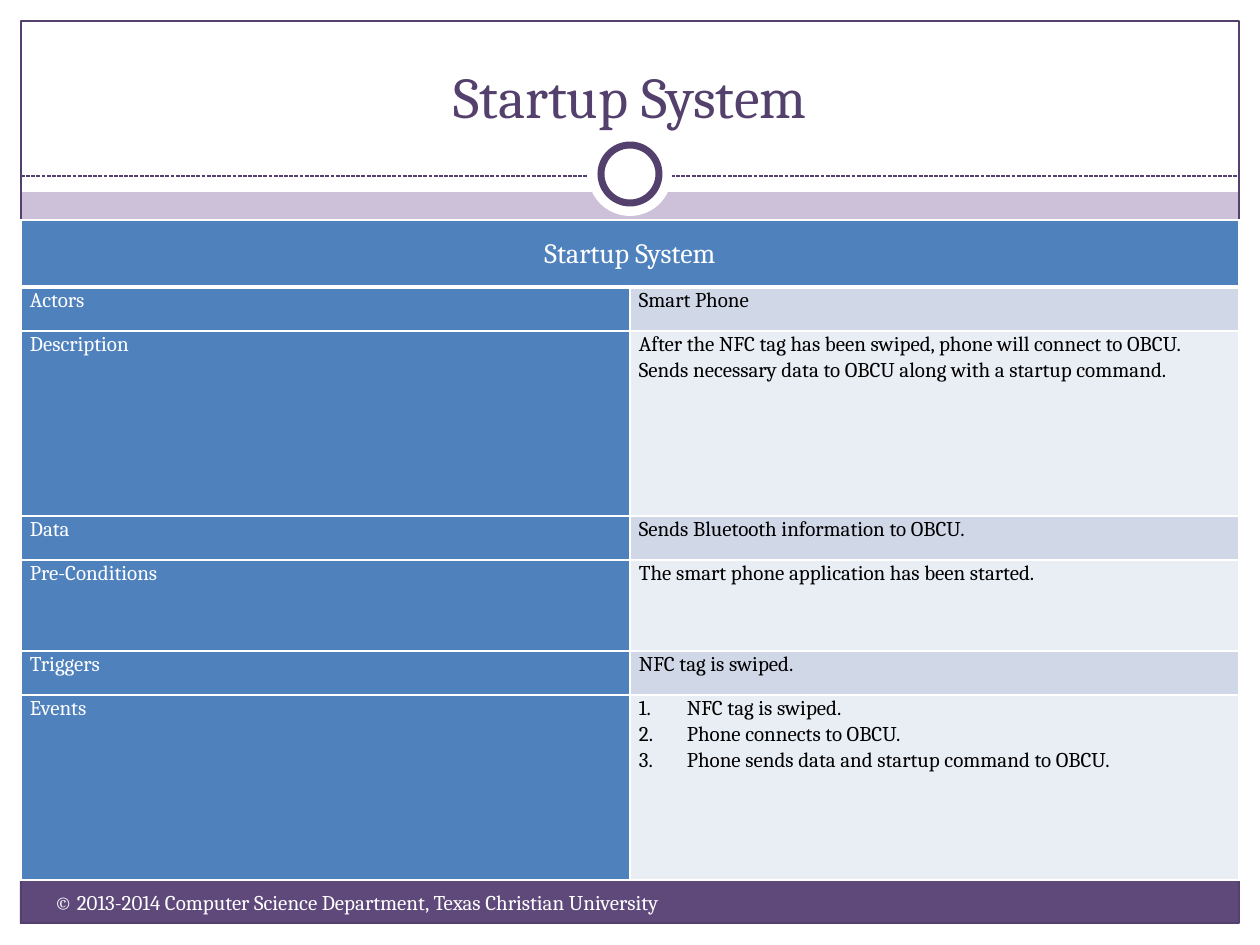
"""Build the Startup System use case slide."""
from dataclasses import dataclass
from lxml.etree import SubElement
from pptx import Presentation
from pptx.dml.color import RGBColor
from pptx.enum.dml import MSO_LINE
from pptx.enum.shapes import MSO_CONNECTOR, MSO_SHAPE
from pptx.enum.text import MSO_ANCHOR, MSO_AUTO_SIZE, PP_ALIGN
from pptx.oxml import parse_xml
from pptx.oxml.ns import nsdecls, qn
from pptx.util import Emu, Pt


@dataclass(frozen=True)
class Theme:
    """Hold the colours, font and type sizes."""
    font: str = "Cambria"
    back: str = "CCC1D9"
    white: str = "FFFFFF"
    black: str = "000000"
    plum: str = "54406C"
    foot: str = "5F497A"
    blue: str = "4F81BD"
    bands: tuple = ("D0D8E8", "E9EDF4")
    title: int = 33
    head: int = 16
    body: int = 12
    thin: float = 0.75
    ring: int = 4


THEME = Theme()
SCALE = 914400 / 126
WIDE, HIGH, EDGE = 1260, 945, 21
ROWS = [
    ("Actors", ["Smart Phone"], 44),
    ("Description", ["After the NFC tag has been swiped, phone will connect to OBCU. "
                     "Sends necessary data to OBCU along with a startup command."], 185),
    ("Data", ["Sends Bluetooth information to OBCU."], 44),
    ("Pre-Conditions", ["The smart phone application has been started."], 91),
    ("Triggers", ["NFC tag is swiped."], 44),
    ("Events", ["NFC tag is swiped.", "Phone connects to OBCU.",
                "Phone sends data and startup command to OBCU."], 185),
]


def px(size):
    """Turn pixels into EMU."""
    return Emu(round(size * SCALE))


def rgb(code):
    """Turn a hex code into a colour."""
    return RGBColor.from_string(code)


def write(frame, lines, size=THEME.body, color=THEME.white, align=PP_ALIGN.LEFT,
          anchor=MSO_ANCHOR.TOP, space=None, listed=False):
    """Fill a text frame with formatted lines."""
    frame.word_wrap = True
    frame.vertical_anchor = anchor
    for i, line in enumerate(lines):
        para = frame.add_paragraph() if i else frame.paragraphs[0]
        para.alignment = align
        if space:
            para.line_spacing = space
        if listed:
            props = para._p.get_or_add_pPr()
            props.set("marL", str(px(48)))
            props.set("indent", str(px(-48)))
            SubElement(props, qn("a:buAutoNum"), type="arabicPeriod")
        run = para.add_run()
        run.text = line
        run.font.name, run.font.size = THEME.font, Pt(size)
        run.font.color.rgb = rgb(color)


def shape(slide, kind, box, fill=None, line=None, width=THEME.thin):
    """Draw a preset shape."""
    item = slide.shapes.add_shape(kind, *map(px, box))
    item.shadow.inherit = False
    if fill:
        item.fill.solid()
        item.fill.fore_color.rgb = rgb(fill)
    else:
        item.fill.background()
    if line:
        item.line.color.rgb = rgb(line)
        item.line.width = Pt(width)
    else:
        item.line.fill.background()


def rule(slide, y):
    """Draw the dashed line across the slide."""
    line = slide.shapes.add_connector(
        MSO_CONNECTOR.STRAIGHT, px(EDGE), px(y), px(WIDE - EDGE), px(y))
    line.line.color.rgb = rgb(THEME.plum)
    line.line.width = Pt(THEME.thin)
    line.line.dash_style = MSO_LINE.SQUARE_DOT
    SubElement(line._element.spPr, qn("a:effectLst"))


def decor(slide):
    """Draw the margins, bands, frame and ring."""
    rect, oval = MSO_SHAPE.RECTANGLE, MSO_SHAPE.OVAL
    for box in ((0, HIGH - EDGE, WIDE, EDGE), (0, 0, WIDE, 192),
                (0, 0, EDGE, HIGH), (WIDE - EDGE, 0, EDGE, HIGH)):
        shape(slide, rect, box, THEME.white)
    shape(slide, rect, (20, 881, 1218, 43), THEME.foot)
    shape(slide, rect, (EDGE, EDGE, WIDE - 2 * EDGE, 902), line=THEME.plum)
    rule(slide, 176)
    shape(slide, oval, (588, 132, 84, 84), THEME.white)
    shape(slide, oval, (601, 145, 58, 58), THEME.white, THEME.plum, THEME.ring)


def title(slide, text):
    """Place the title above the decor."""
    item = slide.shapes.title
    item.left, item.top, item.width, item.height = map(px, (42, 32, 1176, 104))
    slide.shapes._spTree.append(item._element)
    item.text_frame.auto_size = MSO_AUTO_SIZE.NONE
    write(item.text_frame, [text], size=THEME.title, color=THEME.plum,
          align=PP_ALIGN.CENTER, anchor=MSO_ANCHOR.BOTTOM)


def label(slide, box, text):
    """Add a text box."""
    write(slide.shapes.add_textbox(*map(px, box)).text_frame, [text])


def cell(item, lines, fill, base=1, **form):
    """Fill, border and write one table cell."""
    item.margin_left = item.margin_right = px(9)
    item.margin_top = item.margin_bottom = 0
    item.fill.solid()
    item.fill.fore_color.rgb = rgb(fill)
    props = item._tc.get_or_add_tcPr()
    for i, side in enumerate("LRTB"):
        width = Pt(base if side == "B" else 1)
        props.insert(i, parse_xml(
            f'<a:ln{side} {nsdecls("a")} w="{width}"><a:solidFill>'
            f'<a:srgbClr val="{THEME.white}"/></a:solidFill></a:ln{side}>'))
    anchor = form.pop("anchor", MSO_ANCHOR.TOP)
    item.vertical_anchor = anchor
    write(item.text_frame, lines, space=1.07, anchor=None, **form)


def table(slide, head, rows):
    """Build the use case table."""
    highs = [67] + [row[2] for row in rows]
    grid = slide.shapes.add_table(
        len(highs), 2, px(EDGE), px(220), px(1218), px(sum(highs))).table
    for col in grid.columns:
        col.width = px(609)
    for row, high in zip(grid.rows, highs):
        row.height = px(high)
    grid.cell(0, 0).merge(grid.cell(0, 1))
    cell(grid.cell(0, 0), [head], THEME.blue, base=3, size=THEME.head,
         align=PP_ALIGN.CENTER, anchor=MSO_ANCHOR.MIDDLE)
    for i, (name, lines, _) in enumerate(rows):
        cell(grid.cell(i + 1, 0), [name], THEME.blue)
        cell(grid.cell(i + 1, 1), lines, THEME.bands[i % 2],
             color=THEME.black, listed=len(lines) > 1)


def main():
    """Build and save the slide."""
    deck = Presentation()
    deck.slide_width, deck.slide_height = px(WIDE), px(HIGH)
    slide = deck.slides.add_slide(deck.slide_layouts[5])
    slide.background.fill.solid()
    slide.background.fill.fore_color.rgb = rgb(THEME.back)
    decor(slide)
    title(slide, "Startup System")
    label(slide, (42, 883, 703, 50),
          "© 2013-2014 Computer Science Department, Texas Christian University")
    table(slide, "Startup System", ROWS)
    deck.save("out.pptx")


if __name__ == "__main__":
    main()
